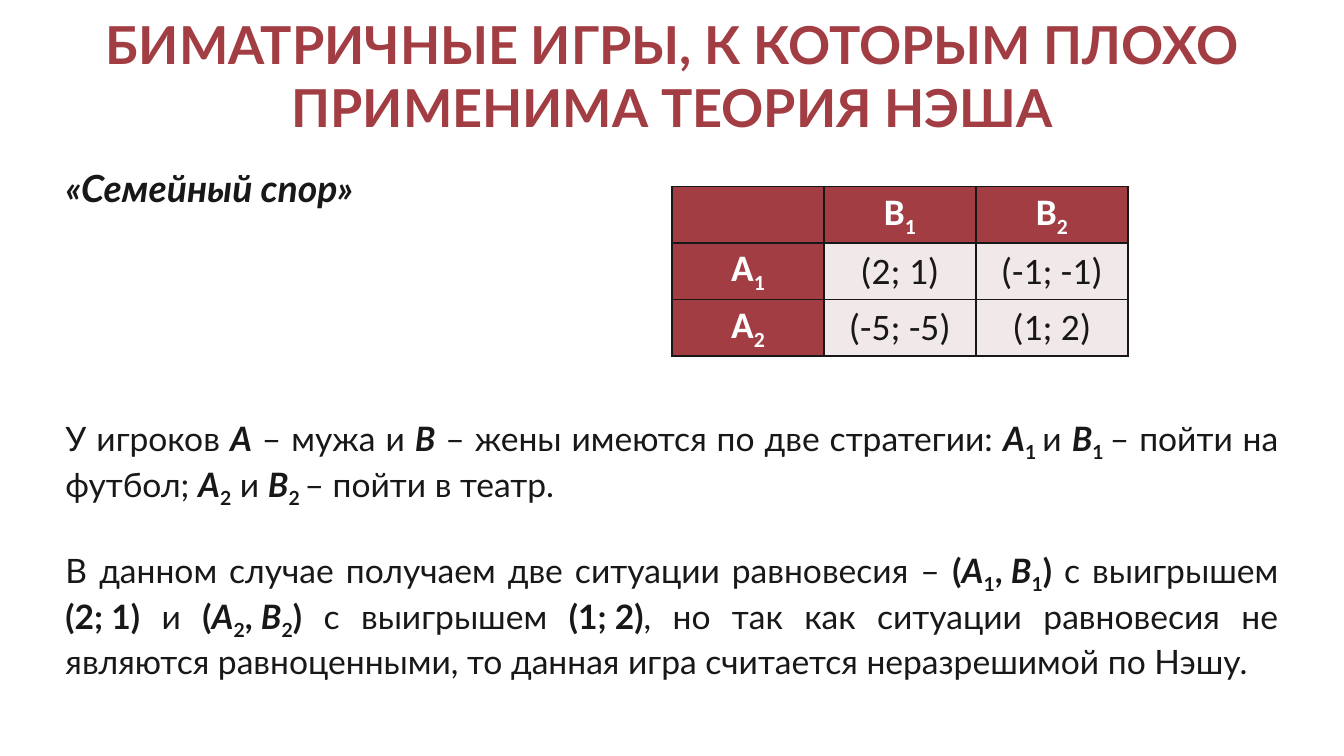
from typing import NamedTuple

from lxml import etree
from pptx import Presentation
from pptx.dml.color import RGBColor
from pptx.enum.text import MSO_ANCHOR, PP_ALIGN
from pptx.oxml.ns import qn
from pptx.util import Pt

LEFT, CENTER, JUSTIFY = PP_ALIGN.LEFT, PP_ALIGN.CENTER, PP_ALIGN.JUSTIFY
MIDDLE = MSO_ANCHOR.MIDDLE
RED, INK, WHITE, PALE = "A23E43", "181818", "FFFFFF", "F0E8E9"


class Run(NamedTuple):
    text: str
    bold: bool = False
    italic: bool = False
    sub: bool = False


class Style(NamedTuple):
    size: float
    color: str
    align: PP_ALIGN
    font: str = "Lato"
    bold: bool = False
    italic: bool = False


class Box(NamedTuple):
    left: float
    top: float
    width: float
    height: float
    style: Style
    paragraphs: list[list[Run]]
    gap: float = 0


def rgb(color: str) -> RGBColor:
    return RGBColor.from_string(color)


def strategy(name: str, index: str) -> list[Run]:
    """A player's strategy: bold italic letter with a bold subscript."""
    return [Run(name, True, True), Run(index, True, sub=True)]


def pair(index: str) -> list[Run]:
    """A bold situation such as (А1, В1)."""
    return [Run("(", True), *strategy("А", index), Run(",\u00a0", True),
            *strategy("В", index), Run(")", True)]


def fill_paragraph(p, runs: list[Run], style: Style) -> None:
    p.alignment = style.align
    f = p.font
    f.size, f.name, f.color.rgb = Pt(style.size), style.font, rgb(style.color)
    f.bold, f.italic = style.bold, style.italic
    for run in runs:
        r = p.add_run()
        r.text = run.text
        if run.bold:
            r.font.bold = True
        if run.italic:
            r.font.italic = True
        if run.sub:
            r._r.get_or_add_rPr().set("baseline", "-25000")


def add_box(s, box: Box) -> None:
    sp = s.shapes.add_textbox(Pt(box.left), Pt(box.top), Pt(box.width), Pt(box.height))
    tf = sp.text_frame
    tf.word_wrap, tf.vertical_anchor = True, MIDDLE
    for i, runs in enumerate(box.paragraphs):
        p = tf.add_paragraph() if i else tf.paragraphs[0]
        fill_paragraph(p, runs, box.style)
        if i:
            p.space_before = Pt(box.gap)


def add_borders(cell, color: str, width: float) -> None:
    tc_pr = cell._tc.get_or_add_tcPr()
    for side in ("a:lnL", "a:lnR", "a:lnT", "a:lnB"):
        ln = etree.SubElement(tc_pr, qn(side), w=str(Pt(width)))
        solid = etree.SubElement(ln, qn("a:solidFill"))
        etree.SubElement(solid, qn("a:srgbClr"), val=color)


def add_payoffs(s, left: float, top: float, col: float, row: float,
                grid: list[list[list[Run]]]) -> None:
    rows, cols = len(grid), len(grid[0])
    table = s.shapes.add_table(rows, cols, Pt(left), Pt(top),
                               Pt(col * cols), Pt(row * rows)).table
    table.first_row = table.horz_banding = False
    for column in table.columns:
        column.width = Pt(col)
    for i, cells in enumerate(grid):
        table.rows[i].height = Pt(row)
        for j, runs in enumerate(cells):
            cell = table.cell(i, j)
            header = i == 0 or j == 0
            cell.vertical_anchor = MIDDLE
            cell.margin_left = cell.margin_right = Pt(5)
            cell.margin_top = cell.margin_bottom = 0
            add_borders(cell, INK, 1)
            cell.fill.solid()
            cell.fill.fore_color.rgb = rgb(RED if header else PALE)
            style = Style(20, WHITE if header else INK, CENTER, "Calibri", header)
            fill_paragraph(cell.text_frame.paragraphs[0], runs, style)


def label(name: str, index: str) -> list[Run]:
    return [Run(name), Run(index, sub=True)]


prs = Presentation()
prs.slide_width, prs.slide_height = Pt(720), Pt(405)
s = prs.slides.add_slide(prs.slide_layouts[6])

# Title and subtitle
add_box(s, Box(28, 15, 664, 50.5, Style(28, RED, CENTER, bold=True),
               [[Run("БИМАТРИЧНЫЕ ИГРЫ, К КОТОРЫМ ПЛОХО ПРИМЕНИМА ТЕОРИЯ НЭША")]]))
add_box(s, Box(28, 84.5, 544, 31.5, Style(20, INK, LEFT, bold=True, italic=True),
               [[Run("«Семейный спор»")]]))

# Explanation
players = [
    Run("У игроков "), Run("А", True, True), Run(" – мужа и "), Run("В", True, True),
    Run(" – жены имеются по две стратегии: "),
    *strategy("А", "1 "), Run("и "), *strategy("В", "1 "), Run("– пойти на футбол; "),
    *strategy("А", "2"), Run(" и "), *strategy("В", "2 "), Run("– пойти в театр."),
]
outcome = [
    Run("В данном случае получаем две ситуации равновесия – "),
    *pair("1"), Run(" с выигрышем "), Run("(2;\u00a01)", True), Run(" и "),
    *pair("2"), Run(" с выигрышем "), Run("(1;\u00a02)", True),
    Run(", но так как ситуации равновесия не являются равноценными, "
        "то данная игра считается неразрешимой по Нэшу."),
]
add_box(s, Box(28, 214.5, 664, 160, Style(18, INK, JUSTIFY), [players, outcome], 21.6))

# Payoff table
add_payoffs(s, 360, 100, 81.4, 30.25, [
    [[], label("B", "1"), label("B", "2")],
    [label("A", "1"), [Run("(2; 1)")], [Run("(-1; -1)")]],
    [label("A", "2"), [Run("(-5; -5)")], [Run("(1; 2)")]],
])

prs.save("out.pptx")
